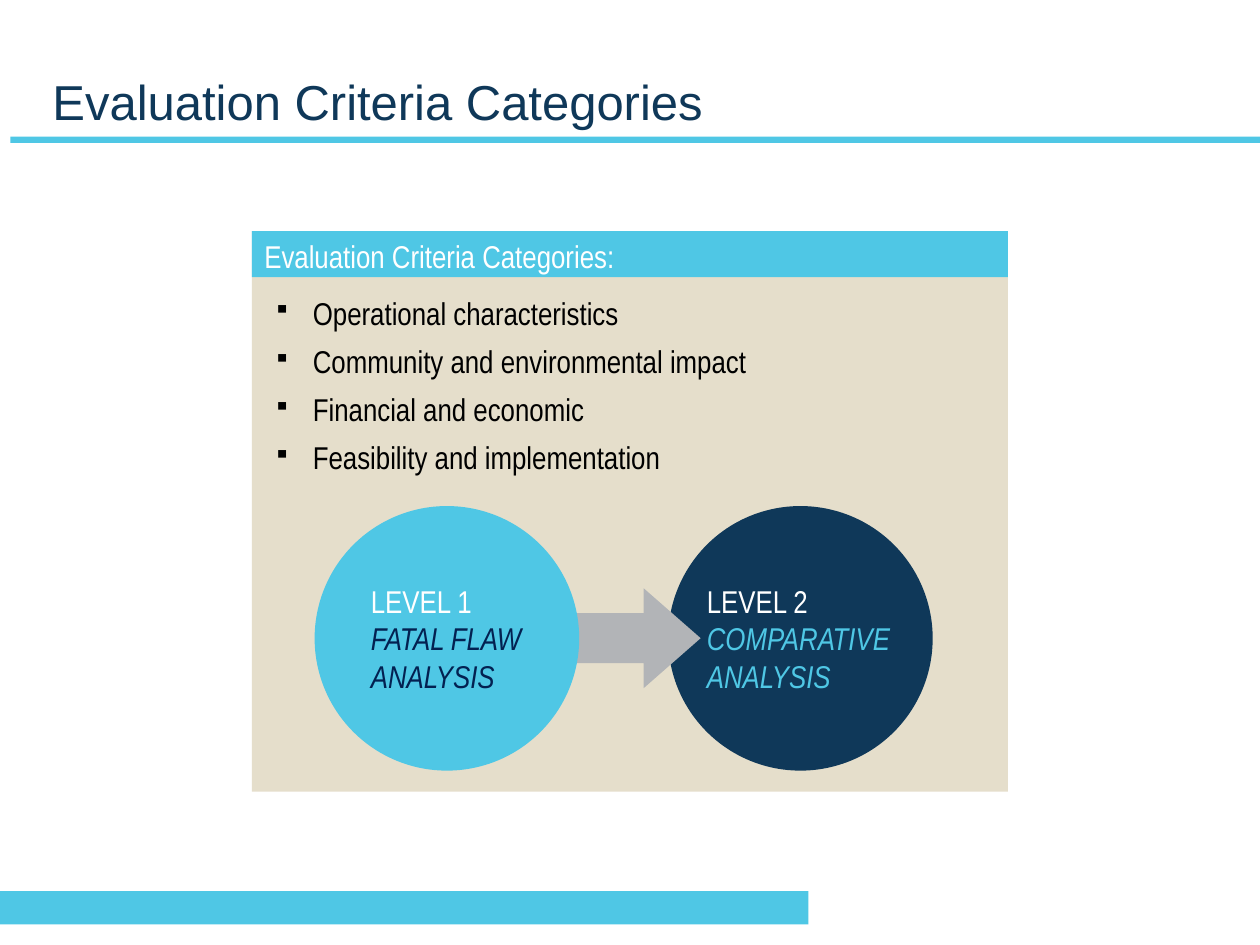
from lxml import etree
from pptx import Presentation
from pptx.dml.color import RGBColor
from pptx.enum.shapes import MSO_SHAPE
from pptx.enum.text import MSO_ANCHOR, PP_ALIGN
from pptx.oxml.ns import qn
from pptx.util import Pt

RECT, OVAL, ARROW = MSO_SHAPE.RECTANGLE, MSO_SHAPE.OVAL, MSO_SHAPE.RIGHT_ARROW
TOP, MIDDLE, BOTTOM = MSO_ANCHOR.TOP, MSO_ANCHOR.MIDDLE, MSO_ANCHOR.BOTTOM
LEFT = PP_ALIGN.LEFT
COLORS = {"sky": "4FC7E5", "navy": "0F3859", "ink": "032151", "sand": "E5DECB",
          "gray": "B2B4B7", "white": "FFFFFF", "black": "000000"}

prs = Presentation()
prs.slide_width, prs.slide_height = Pt(720), Pt(540)
slide = prs.slides.add_slide(prs.slide_layouts[5])


def add_block(kind, left, top, width, height, color):
    block = slide.shapes.add_shape(kind, Pt(left), Pt(top), Pt(width), Pt(height))
    block.shadow.inherit = False
    block.fill.solid()
    block.fill.fore_color.rgb = RGBColor.from_string(COLORS[color])
    block.line.fill.background()
    return block


def write(shape, lines, color, size=18, font="Arial Narrow", anchor=TOP,
          insets=(7.2, 3.6, 7.2, 3.6), after=0, bullet=None, accent=None):
    """Write one paragraph per line; accent sets later lines in italic colour."""
    frame = shape.text_frame
    frame.word_wrap = True
    frame.vertical_anchor = anchor
    (frame.margin_left, frame.margin_top,
     frame.margin_right, frame.margin_bottom) = [Pt(inset) for inset in insets]
    for i, line in enumerate(lines):
        paragraph = frame.paragraphs[0] if i == 0 else frame.add_paragraph()
        paragraph.alignment = LEFT
        paragraph.space_after = Pt(after)
        if bullet:
            props = paragraph._p.get_or_add_pPr()
            props.set("marL", str(Pt(22.5)))
            props.set("indent", str(-Pt(22.5)))
            etree.SubElement(props, qn("a:buSzPct"), val="75000")
            etree.SubElement(props, qn("a:buChar"), char=bullet)
        run = paragraph.add_run()
        run.text = line
        run.font.name = font
        run.font.size = Pt(size)
        accented = accent is not None and i > 0
        run.font.italic = True if accented else None
        run.font.color.rgb = RGBColor.from_string(COLORS[accent if accented else color])


# Footer bar and title rule
add_block(RECT, 0, 509.3, 462, 19, "sky")
add_block(RECT, 6, 78, 714, 3.6, "sky")

# Title
title = slide.shapes.title
title.left, title.top, title.width, title.height = Pt(12), Pt(0), Pt(696), Pt(78)
write(title, ["Evaluation Criteria Categories"], "navy", size=28, font="Arial",
      anchor=BOTTOM, insets=(18, 3.6, 18, 3.6))

# Panel with its heading
add_block(RECT, 144, 132, 432, 320.4, "sand")
heading = add_block(RECT, 144, 132, 432, 26.4, "sky")
write(heading, ["Evaluation Criteria Categories:"], "white", after=6)

# Criteria list
criteria = slide.shapes.add_textbox(Pt(149.2), Pt(164.2), Pt(312), Pt(114))
write(criteria, ["Operational characteristics", "Community and environmental impact",
                 "Financial and economic", "Feasibility and implementation"],
      "black", after=6, bullet="▪")

# Levels: the arrow starts behind level 1 and ends over level 2
level_2 = add_block(OVAL, 381.8, 289.2, 151.2, 151.2, "navy")
write(level_2, ["LEVEL 2", "COMPARATIVE ANALYSIS"], "white", anchor=MIDDLE,
      insets=(0, 0, 0, 0), accent="sky")

arrow = add_block(ARROW, 292.4, 336.2, 108, 57, "gray")
arrow.adjustments[0] = 0.5
arrow.adjustments[1] = 0.57

level_1 = add_block(OVAL, 179.8, 289.2, 151.2, 151.2, "sky")
write(level_1, ["LEVEL 1", "FATAL FLAW ANALYSIS"], "white", anchor=MIDDLE,
      insets=(10, 0, 0, 0), accent="ink")

prs.save("out.pptx")
